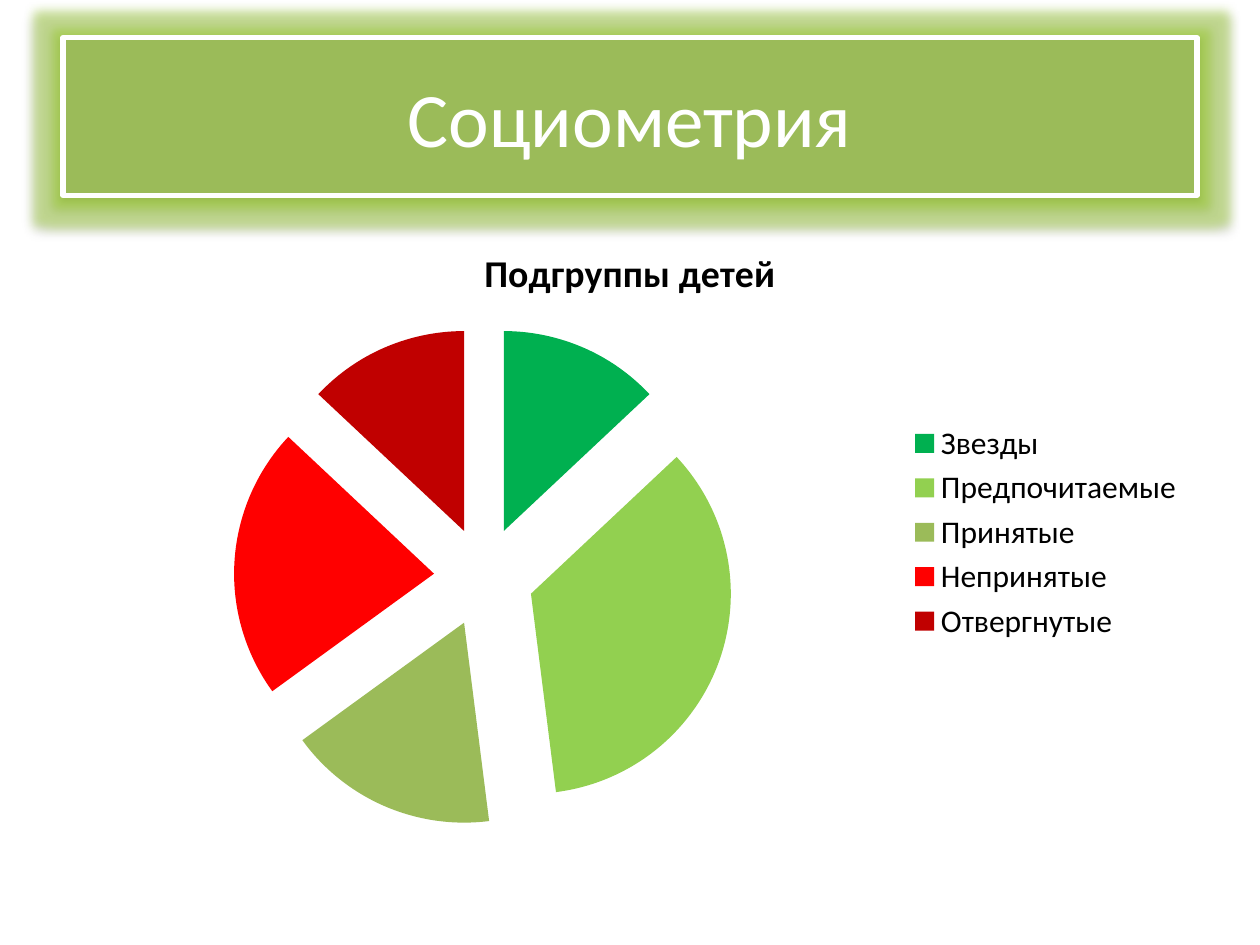
from dataclasses import dataclass

from lxml import etree
from pptx import Presentation
from pptx.chart.data import CategoryChartData
from pptx.dml.color import RGBColor
from pptx.enum.chart import XL_CHART_TYPE, XL_LEGEND_POSITION
from pptx.enum.shapes import MSO_SHAPE
from pptx.enum.text import MSO_ANCHOR, PP_ALIGN
from pptx.oxml import parse_xml
from pptx.oxml.ns import nsdecls, qn
from pptx.util import Inches, Pt


@dataclass(frozen=True)
class Theme:
    font: str = "Calibri"
    banner: str = "9BBB59"
    glow: str = "9BD323"
    light: str = "FFFFFF"
    dark: str = "000000"
    heading_size: float = 44
    chart_title_size: float = 21.6
    legend_size: float = 18


THEME = Theme()
HEADING = "Социометрия"
CHART_TITLE = "Подгруппы детей"
SUBGROUPS = [
    ("Звезды", 13, "00B050"),
    ("Предпочитаемые", 35, "92D050"),
    ("Принятые", 17, "9BBB59"),
    ("Непринятые", 22, "FF0000"),
    ("Отвергнутые", 13, "C00000"),
]
EXPLOSION = 25


def style_font(font, size, color, bold=False):
    formats = {"name": THEME.font, "size": Pt(size), "bold": bold}
    for attribute, value in formats.items():
        setattr(font, attribute, value)
    font.color.rgb = RGBColor.from_string(color)


def add_glow_and_shadow(shape):
    shape._element.spPr.append(parse_xml(
        f'<a:effectLst {nsdecls("a")}>'
        f'<a:glow rad="{Pt(11)}"><a:srgbClr val="{THEME.glow}">'
        '<a:alpha val="40000"/></a:srgbClr></a:glow>'
        f'<a:outerShdw blurRad="{Pt(3.1)}" dist="{Pt(1.6)}" dir="5400000"'
        f' rotWithShape="0"><a:srgbClr val="{THEME.dark}">'
        '<a:alpha val="38000"/></a:srgbClr></a:outerShdw></a:effectLst>'))


def add_banner(slide, box):
    banner = slide.shapes.add_shape(MSO_SHAPE.RECTANGLE, *box)
    banner.fill.solid()
    banner.fill.fore_color.rgb = RGBColor.from_string(THEME.banner)
    banner.line.color.rgb = RGBColor.from_string(THEME.light)
    banner.line.width = Pt(3)
    add_glow_and_shadow(banner)
    frame = banner.text_frame
    frame.vertical_anchor = MSO_ANCHOR.MIDDLE
    heading = frame.paragraphs[0]
    heading.alignment = PP_ALIGN.CENTER
    run = heading.add_run()
    run.text = HEADING
    style_font(run.font, THEME.heading_size, THEME.light)


def explode(series, percent):
    """Push every slice away from the centre of the pie."""
    explosion = etree.Element(qn("c:explosion"), val=str(percent))
    series._element.find(qn("c:tx")).addnext(explosion)


def add_subgroup_pie(slide, box):
    names, shares, colors = zip(*SUBGROUPS)
    data = CategoryChartData()
    data.categories = names
    data.add_series(CHART_TITLE, shares)
    chart = slide.shapes.add_chart(XL_CHART_TYPE.PIE, *box, data).chart
    style_font(chart.font, THEME.legend_size, THEME.dark)

    chart.has_title = True
    title = chart.chart_title.text_frame
    title.text = CHART_TITLE
    style_font(title.paragraphs[0].runs[0].font,
               THEME.chart_title_size, THEME.dark, bold=True)
    chart.chart_title.include_in_layout = False

    chart.has_legend = True
    chart.legend.position = XL_LEGEND_POSITION.RIGHT
    chart.legend.include_in_layout = False

    pie = chart.plots[0]
    pie.vary_by_categories = True
    series = pie.series[0]
    for index, color in enumerate(colors):
        fill = series.points[index].format.fill
        fill.solid()
        fill.fore_color.rgb = RGBColor.from_string(color)
    explode(series, EXPLOSION)


def main():
    deck = Presentation()
    deck.slide_width, deck.slide_height = Inches(10), Inches(7.5)
    width, height = deck.slide_width, deck.slide_height
    slide = deck.slides.add_slide(deck.slide_layouts[6])

    left, content_width = int(width * 0.05), int(width * 0.9)
    add_banner(slide, (left, int(height * 0.04),
                       content_width, int(height / 6)))
    add_subgroup_pie(slide, (left, int(height * 7 / 30),
                             content_width, int(height * 0.66)))
    deck.save("out.pptx")


if __name__ == "__main__":
    main()
